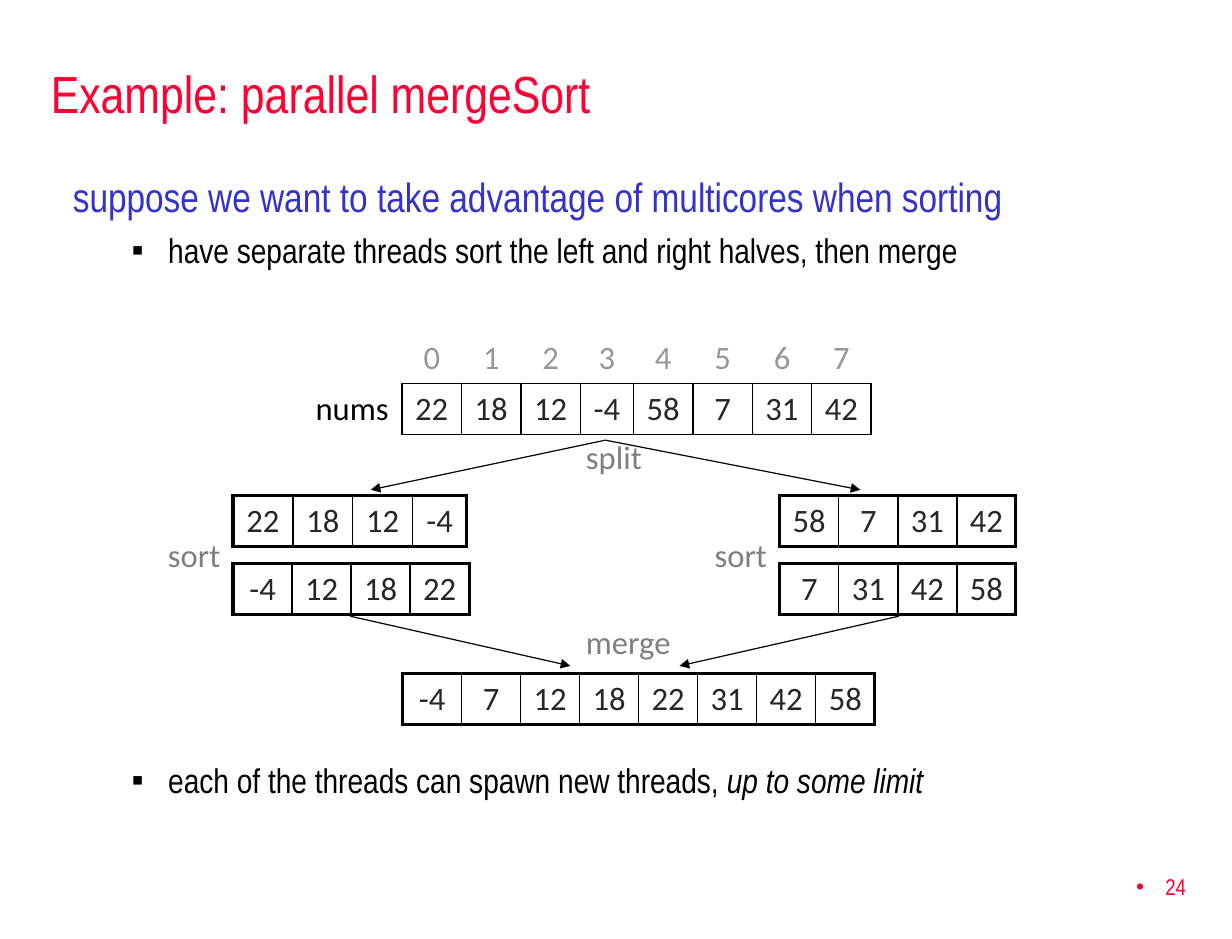
from pptx import Presentation
from pptx.dml.color import RGBColor
from pptx.enum.shapes import MSO_CONNECTOR as Connector
from pptx.enum.text import MSO_ANCHOR as Anchor, MSO_AUTO_SIZE as AutoSize, PP_ALIGN as Align
from pptx.oxml.ns import qn
from pptx.util import Pt
from lxml.etree import SubElement, Element

RED = RGBColor(0xFF, 0x00, 0x33)
BLUE = RGBColor(0x33, 0x33, 0xCC)
BLACK = RGBColor(0x00, 0x00, 0x00)
INK = RGBColor(0x26, 0x26, 0x26)
GRAY = RGBColor(0x7F, 0x7F, 0x7F)
INDEX_GRAY = RGBColor(0x96, 0x96, 0x96)
HEADING_FONT = "Arial Narrow"
DIAGRAM_FONT = "Calibri"
THIN, THICK = 1, 2.25
ROW = 31
CELL = 36.25


def format_runs(paragraph, font, size, color):
    for run in paragraph.runs:
        run.font.name = font
        run.font.size = Pt(size)
        run.font.color.rgb = color


def set_bullet(paragraph, margin, hanging, char=None):
    props = paragraph._p.get_or_add_pPr()
    props.set("marL", str(Pt(margin)))
    props.set("indent", str(-Pt(hanging)))
    if char:
        SubElement(props, qn("a:buFont"), typeface="Arial")
        SubElement(props, qn("a:buChar"), char=char)
    else:
        SubElement(props, qn("a:buNone"))


def place(shape, left, top, width, height):
    shape.left, shape.top = Pt(left), Pt(top)
    shape.width, shape.height = Pt(width), Pt(height)


def fill_title(slide, left, top, width, height):
    title = slide.shapes.title
    place(title, left, top, width, height)
    frame = title.text_frame
    frame.text = "Example: parallel mergeSort"
    frame.auto_size = AutoSize.NONE
    frame.vertical_anchor = Anchor.MIDDLE
    frame.paragraphs[0].alignment = Align.LEFT
    format_runs(frame.paragraphs[0], HEADING_FONT, 32, RED)


def fill_body(slide, left, top, width, height):
    body = slide.placeholders[1]
    place(body, left, top, width, height)
    frame = body.text_frame
    frame.auto_size = AutoSize.NONE
    frame.text = "suppose we want to take advantage of multicores when sorting"
    claim = frame.paragraphs[0]
    claim.space_before = Pt(2)
    set_bullet(claim, 27, 27)
    format_runs(claim, HEADING_FONT, 25, BLUE)

    diagram_gap = 300
    points = [
        ("have separate threads sort the left and right halves, then merge", "", 5),
        ("each of the threads can spawn new threads, ", "up to some limit", diagram_gap),
    ]
    for plain, emphasis, gap in points:
        point = frame.add_paragraph()
        point.text = plain
        if emphasis:
            limit = point.add_run()
            limit.text = emphasis
            limit.font.italic = True
        point.level = 1
        point.space_before = Pt(gap)
        set_bullet(point, 58.5, 22.5, "▪")
        format_runs(point, HEADING_FONT, 21, BLACK)


def add_page_number(slide, left, top, width, height):
    frame = slide.shapes.add_textbox(Pt(left), Pt(top), Pt(width), Pt(height)).text_frame
    frame.word_wrap = True
    frame.vertical_anchor = Anchor.MIDDLE
    frame.text = "24"
    number = frame.paragraphs[0]
    number.alignment = Align.RIGHT
    set_bullet(number, 18, 18, "•")
    format_runs(number, HEADING_FONT, 14, RED)


def set_borders(cell, widths):
    cell.fill.background()
    props = cell._tc.get_or_add_tcPr()
    for position, (side, width) in enumerate(zip("LRTB", widths)):
        line = Element(qn(f"a:ln{side}"), w=str(Pt(width)))
        if width:
            fill = SubElement(line, qn("a:solidFill"))
            SubElement(fill, qn("a:srgbClr"), val=str(BLACK))
        else:
            SubElement(line, qn("a:noFill"))
        props.insert(position, line)


def add_grid(slide, left, top, widths, rows):
    grid = slide.shapes.add_table(
        len(rows), len(widths), Pt(left), Pt(top), Pt(sum(widths)), Pt(ROW * len(rows))
    ).table
    grid.first_row = grid.horz_banding = False
    for column, width in zip(grid.columns, widths):
        column.width = Pt(width)
    for row, values in zip(grid.rows, rows):
        row.height = Pt(ROW)
        for cell, value in zip(row.cells, values):
            cell.text = value
            cell.vertical_anchor = Anchor.MIDDLE
            entry = cell.text_frame.paragraphs[0]
            entry.alignment = Align.CENTER
            format_runs(entry, DIAGRAM_FONT, 20, INK)
    return grid


def add_array(slide, left, top, values, widths=None):
    grid = add_grid(slide, left, top, widths or [CELL] * len(values), [values])
    last = len(values) - 1
    for i in range(len(values)):
        start = THICK if i == 0 else THIN
        end = THICK if i == last else THIN
        set_borders(grid.cell(0, i), (start, end, THICK, THICK))


def add_indexed_array(slide, left, top, name, values):
    widths = [61.25] + [32.5 if value == "-4" else 36.5 for value in values]
    indices = [str(i) for i in range(len(values))]
    grid = add_grid(slide, left, top, widths, [[""] + indices, [name] + values])
    for i in range(len(widths)):
        index, value = grid.cell(0, i), grid.cell(1, i)
        format_runs(index.text_frame.paragraphs[0], DIAGRAM_FONT, 20, INDEX_GRAY)
        set_borders(index, (0, 0, 0, THIN if i else 0))
        set_borders(value, (THIN,) * 4 if i else (0, THIN, 0, 0))
    format_runs(grid.cell(1, 0).text_frame.paragraphs[0], DIAGRAM_FONT, 20, BLACK)


def add_label(slide, left, top, width, text):
    frame = slide.shapes.add_textbox(Pt(left), Pt(top), Pt(width), Pt(31.5)).text_frame
    frame.word_wrap = False
    frame.text = text
    format_runs(frame.paragraphs[0], DIAGRAM_FONT, 20, GRAY)


def add_arrow(slide, x1, y1, x2, y2):
    arrow = slide.shapes.add_connector(Connector.STRAIGHT, Pt(x1), Pt(y1), Pt(x2), Pt(y2))
    arrow.line.color.rgb = BLACK
    arrow.line.width = Pt(0.75)
    SubElement(arrow.line._get_or_add_ln(), qn("a:tailEnd"), type="triangle")
    SubElement(arrow._element.spPr, qn("a:effectLst"))


def add_half(slide, left, top, values, widths=None):
    add_array(slide, left + 47, top, values, widths)
    add_array(slide, left + 47, top + 41.75, sorted(values, key=int))
    add_label(slide, left, top + 20.25, 47, "sort")


def add_diagram(slide, left, top):
    nums = ["22", "18", "12", "-4", "58", "7", "31", "42"]
    middle = len(nums) // 2
    add_indexed_array(slide, left + 89.5, top, "nums", nums)

    add_label(slide, left + 256.5, top + 60.5, 49, "split")
    for tip in (131.5, 432):
        add_arrow(slide, left + 275.5, top + 66, left + tip, top + 96.5)

    add_half(slide, left, top + 100, nums[:middle], [36.75, 36.75, 36.75, 33])
    add_half(slide, left + 335.5, top + 100, nums[middle:])

    add_label(slide, left + 256.5, top + 174, 68, "merge")
    for start, tip in ((119, 254), (455.5, 321)):
        add_arrow(slide, left + start, top + 174, left + tip, top + 204.5)
    add_array(slide, left + 151, top + 209, sorted(nums, key=int))


def main():
    deck = Presentation()
    deck.slide_width, deck.slide_height = Pt(756), Pt(576)
    slide = deck.slides.add_slide(deck.slide_layouts[1])
    fill_title(slide, 24, 30, 714, 54)
    fill_body(slide, 37.5, 102, 688, 426)
    add_page_number(slide, 577.5, 525, 157.5, 38)
    add_diagram(slide, 96, 204)
    deck.save("out.pptx")


if __name__ == "__main__":
    main()
